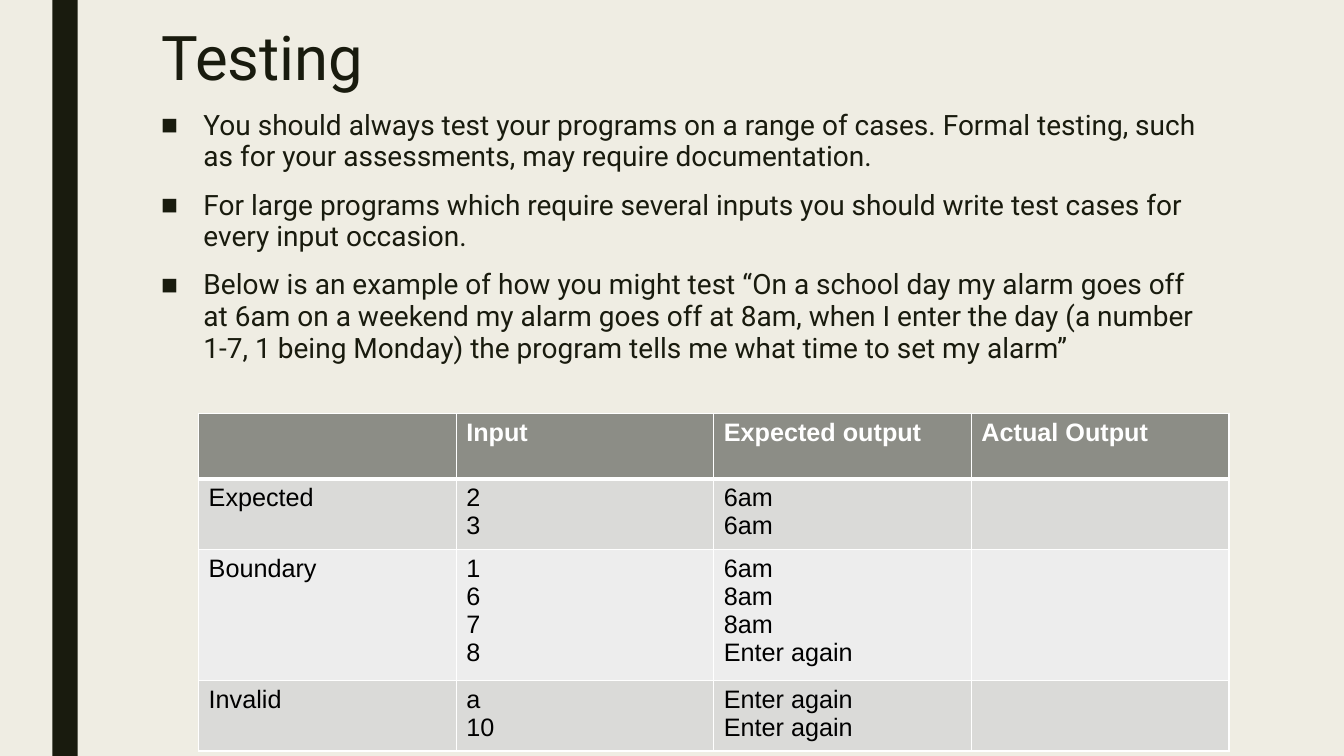
from pptx import Presentation
from pptx.dml.color import RGBColor
from pptx.enum.shapes import MSO_SHAPE
from pptx.enum.text import MSO_ANCHOR, MSO_AUTO_SIZE, PP_ALIGN
from pptx.oxml import parse_xml
from pptx.oxml.ns import nsdecls
from pptx.util import Inches, Pt

CREAM = RGBColor(0xEF, 0xED, 0xE3)
DARK = RGBColor(0x19, 0x1B, 0x0E)
GREY = RGBColor(0x8C, 0x8D, 0x86)
MID = RGBColor(0xDA, 0xDA, 0xD8)
PALE = RGBColor(0xED, 0xED, 0xED)
WHITE = RGBColor(0xFF, 0xFF, 0xFF)
BLACK = RGBColor(0x00, 0x00, 0x00)


def write(frame, text, font="Roboto", size=20, color=DARK, bold=False,
          spacing=None, gap=0, bullet=None):
    """Fill a text frame with one paragraph per line of text."""
    frame.word_wrap = True
    frame.vertical_anchor = MSO_ANCHOR.TOP
    for i, line in enumerate(text.split("\n")):
        para = frame.add_paragraph() if i else frame.paragraphs[0]
        para.alignment = PP_ALIGN.LEFT
        para.line_spacing = spacing
        para.space_before = Pt(gap if i else 0)
        run = para.add_run()
        run.text = line
        run.font.name, run.font.size = font, Pt(size)
        run.font.bold = bold
        run.font.color.rgb = color
        if bullet:
            props = para._p.get_or_add_pPr()
            props.set("marL", str(Inches(0.42)))
            props.set("indent", str(Inches(-0.42)))
            for tag in (f'<a:buClr {nsdecls("a")}><a:srgbClr val="{color}"/></a:buClr>',
                        f'<a:buFont {nsdecls("a")} typeface="Arial"/>',
                        f'<a:buChar {nsdecls("a")} char="{bullet}"/>'):
                props.append(parse_xml(tag))


def edge(cell, **widths):
    """Give a cell white borders, with widths in points by side."""
    props = cell._tc.get_or_add_tcPr()
    for i, side in enumerate("LRTB"):
        width = Pt(widths.get(side, 1))
        props.insert(i, parse_xml(
            f'<a:ln{side} {nsdecls("a")} w="{width}"><a:solidFill>'
            f'<a:srgbClr val="{WHITE}"/></a:solidFill></a:ln{side}>'))


deck = Presentation()
deck.slide_width, deck.slide_height = Inches(13.33), Inches(7.5)
slide = deck.slides.add_slide(deck.slide_layouts[5])
slide.background.fill.solid()
slide.background.fill.fore_color.rgb = CREAM

# Side bar
bar = slide.shapes.add_shape(MSO_SHAPE.RECTANGLE, Inches(0.52), 0,
                             Inches(0.25), Inches(7.5))
bar.shadow.inherit = False
bar.fill.solid()
bar.fill.fore_color.rgb = DARK
bar.line.fill.background()

# Title
title = slide.shapes.title
title.left, title.top = Inches(1.5), Inches(0.23)
title.width, title.height = Inches(10.5), Inches(1.62)
title.text_frame.auto_size = MSO_AUTO_SIZE.NONE
write(title.text_frame, "Testing", size=44, spacing=0.89)

# Bullet points
points = [
    "You should always test your programs on a range of cases. Formal testing, "
    "such as for your assessments, may require documentation.",
    "For large programs which require several inputs you should write test "
    "cases for every input occasion.",
    "Below is an example of how you might test “On a school day my alarm goes "
    "off at 6am on a weekend my alarm goes off at 8am, when I enter the day "
    "(a number 1-7, 1 being Monday) the program tells me what time to set my alarm”",
]
body = slide.shapes.add_textbox(Inches(1.5), Inches(1.04), Inches(10.5), Inches(4.77))
write(body.text_frame, "\n".join(points), spacing=0.94, gap=12, bullet="■")

# Table of test cases
rows = [
    ("", "Input", "Expected output", "Actual Output"),
    ("Expected", "2\n3", "6am\n6am", ""),
    ("Boundary", "1\n6\n7\n8", "6am\n8am\n8am\nEnter again", ""),
    ("Invalid", "a\n10", "Enter again\nEnter again", ""),
]
heights = [0.65, 0.66, 1.22, 0.66]
fills = [GREY, MID, PALE, MID]
table = slide.shapes.add_table(4, 4, Inches(1.97), Inches(4.1),
                               Inches(10.22), Inches(sum(heights))).table
for r, row in enumerate(rows):
    table.rows[r].height = Inches(heights[r])
    head = r == 0
    for c, text in enumerate(row):
        cell = table.cell(r, c)
        cell.fill.solid()
        cell.fill.fore_color.rgb = fills[r]
        edge(cell, T=3 if r == 1 else 1, B=3 if head else 1)
        if text:
            write(cell.text_frame, text, font="Arial", size=18, bold=head,
                  color=WHITE if head else BLACK)

deck.save("out.pptx")
